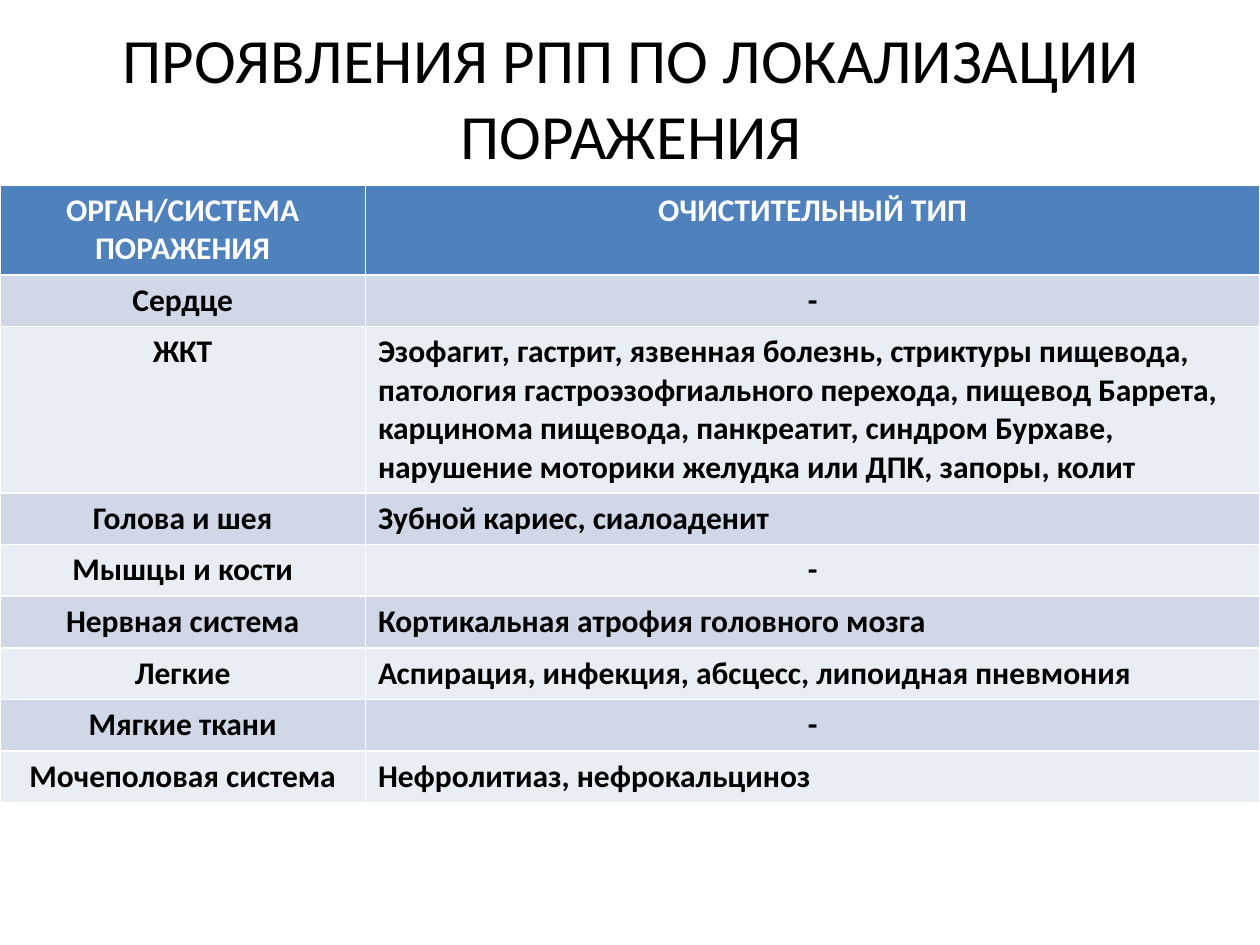
"""Build a slide with a table of eating disorder signs by affected organ."""
from typing import NamedTuple

from pptx import Presentation
from pptx.dml.color import RGBColor
from pptx.enum.text import MSO_ANCHOR, PP_ALIGN
from pptx.util import Inches, Pt

WHITE = RGBColor(0xFF, 0xFF, 0xFF)
BLACK = RGBColor(0x00, 0x00, 0x00)
HEADER_BLUE = RGBColor(0x4F, 0x81, 0xBD)
BANDS = (RGBColor(0xE9, 0xED, 0xF4), RGBColor(0xD0, 0xD8, 0xE8))

TITLE_FORMAT = {"name": "Calibri", "size": Pt(36), "bold": False}
CELL_FORMAT = {"name": "Calibri", "size": Pt(18), "bold": True}
COLUMN_WIDTHS = (2.9, 7.1)
ROW_HEIGHT = 0.41
NONE_FOUND = "-"


class Finding(NamedTuple):
    organ: str
    signs: str


HEADING = Finding("ОРГАН/СИСТЕМА ПОРАЖЕНИЯ", "ОЧИСТИТЕЛЬНЫЙ ТИП")
FINDINGS = (
    Finding("Сердце", NONE_FOUND),
    Finding(
        "ЖКТ",
        "Эзофагит, гастрит, язвенная болезнь, стриктуры пищевода, "
        "патология гастроэзофгиального перехода, пищевод Баррета, "
        "карцинома пищевода, панкреатит, синдром Бурхаве, "
        "нарушение моторики желудка или ДПК, запоры, колит",
    ),
    Finding("Голова и шея", "Зубной кариес, сиалоаденит"),
    Finding("Мышцы и кости", NONE_FOUND),
    Finding("Нервная система", "Кортикальная атрофия головного мозга"),
    Finding("Легкие", "Аспирация, инфекция, абсцесс, липоидная пневмония"),
    Finding("Мягкие ткани", NONE_FOUND),
    Finding("Мочеполовая система", "Нефролитиаз, нефрокальциноз"),
)


def write(frame, text: str, font_format: dict, color: RGBColor, align: PP_ALIGN) -> None:
    """Fill a text frame with one formatted paragraph."""
    paragraph = frame.paragraphs[0]
    paragraph.alignment = align
    run = paragraph.add_run()
    run.text = text
    for attribute, value in font_format.items():
        setattr(run.font, attribute, value)
    run.font.color.rgb = color


def add_title(slide, text: str) -> None:
    """Add the centred slide title."""
    box = slide.shapes.add_textbox(Inches(0.51), Inches(0.14), Inches(9), Inches(1.25))
    frame = box.text_frame
    frame.word_wrap = True
    frame.vertical_anchor = MSO_ANCHOR.MIDDLE
    write(frame, text, TITLE_FORMAT, BLACK, PP_ALIGN.CENTER)


def add_findings(slide, findings: tuple[Finding, ...]) -> None:
    """Add the table with its heading and banded rows."""
    rows = (HEADING, *findings)
    table = slide.shapes.add_table(
        len(rows), len(COLUMN_WIDTHS), Inches(0), Inches(1.47),
        Inches(sum(COLUMN_WIDTHS)), Inches(ROW_HEIGHT * len(rows)),
    ).table
    for column, width in zip(table.columns, COLUMN_WIDTHS):
        column.width = Inches(width)
    for row_index, finding in enumerate(rows):
        is_heading = row_index == 0
        for column_index, text in enumerate(finding):
            cell = table.cell(row_index, column_index)
            cell.fill.solid()
            cell.fill.fore_color.rgb = HEADER_BLUE if is_heading else BANDS[row_index % 2]
            centred = is_heading or column_index == 0 or text == NONE_FOUND
            write(
                cell.text_frame, text, CELL_FORMAT, WHITE if is_heading else BLACK,
                PP_ALIGN.CENTER if centred else PP_ALIGN.LEFT,
            )


def main() -> None:
    """Create and save the presentation."""
    presentation = Presentation()
    presentation.slide_width = Inches(10)
    presentation.slide_height = Inches(7.5)
    slide = presentation.slides.add_slide(presentation.slide_layouts[6])
    add_findings(slide, FINDINGS)
    add_title(slide, "ПРОЯВЛЕНИЯ РПП ПО ЛОКАЛИЗАЦИИ ПОРАЖЕНИЯ")
    presentation.save("out.pptx")


if __name__ == "__main__":
    main()
